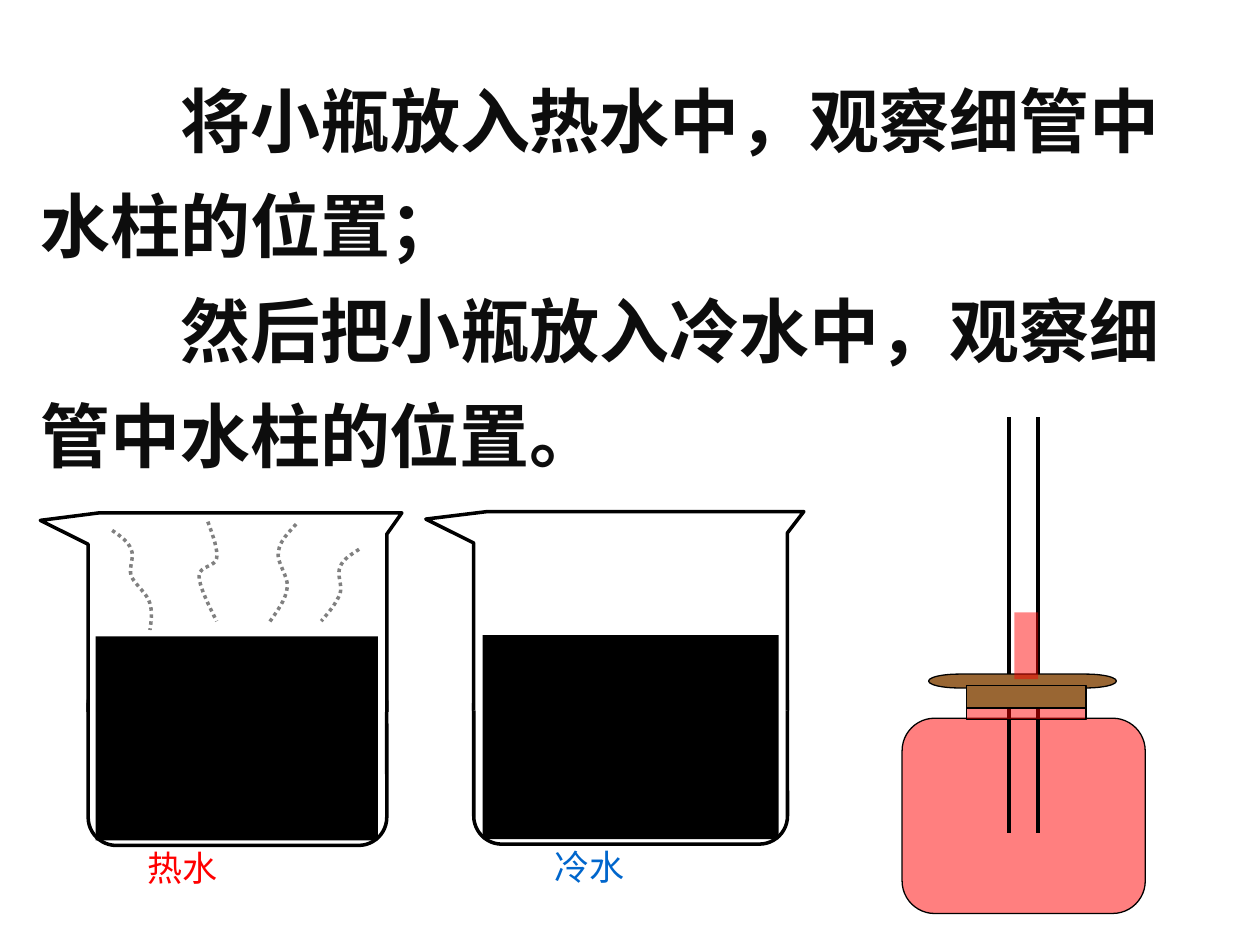
"""Build a slide on watching a thin tube's water column in hot and cold water."""
from dataclasses import dataclass

from lxml.etree import SubElement
from pptx import Presentation
from pptx.dml.color import RGBColor
from pptx.enum.dml import MSO_LINE
from pptx.enum.shapes import MSO_CONNECTOR, MSO_SHAPE as Preset
from pptx.enum.text import MSO_ANCHOR, MSO_AUTO_SIZE, PP_ALIGN
from pptx.oxml.ns import qn
from pptx.shapes.shapetree import GroupShapes
from pptx.util import Inches, Pt

FONT = "Noto Sans CJK SC"
BLACK, WHITE, RED, BLUE = "000000", "FFFFFF", "FF0000", "0066CC"
CORK, STEAM, INK = "996633", "808080", "0D0D0D"
Point = tuple[float, float]


@dataclass
class Beaker:
    left: float
    top: float
    width: float
    rim_start: float
    rim_overhang: float
    water_inset: float
    label: str
    label_left: float
    label_color: str
    steam: tuple[tuple[Point, ...], ...] = ()


@dataclass
class Part:
    preset: Preset
    box: tuple[float, float, float, float]
    fill: str
    opacity: int = 100
    outlined: bool = True


STEAM_CURVES = (
    ((1.65, 4.14), (1.69, 4.25), (1.73, 4.36), (1.72, 4.43), (1.71, 4.5),
     (1.58, 4.49), (1.58, 4.57), (1.58, 4.65), (1.65, 4.79), (1.72, 4.93)),
    ((2.35, 4.16), (2.29, 4.23), (2.22, 4.29), (2.21, 4.38), (2.19, 4.46),
     (2.29, 4.57), (2.28, 4.66), (2.27, 4.76), (2.2, 4.85), (2.13, 4.95)),
    ((0.89, 4.21), (0.95, 4.25), (1.02, 4.3), (1.04, 4.36), (1.07, 4.42),
     (1.02, 4.5), (1.04, 4.57), (1.07, 4.64), (1.17, 4.71), (1.19, 4.79),
     (1.21, 4.86), (1.2, 4.93), (1.19, 5)),
    ((2.85, 4.36), (2.79, 4.4), (2.72, 4.44), (2.7, 4.5), (2.67, 4.56),
     (2.72, 4.64), (2.7, 4.71), (2.67, 4.79), (2.61, 4.86), (2.55, 4.93)),
)
BEAKERS = (
    Beaker(0.7, 4.07, 2.37, 0.09, 0.12, 0.06, "热水", 1.07, RED, STEAM_CURVES),
    Beaker(3.76, 4.06, 2.49, 0.11, 0.13, 0.07, "冷水", 4.3, BLUE),
)
BOTTLE = Part(Preset.ROUNDED_RECTANGLE, (7.16, 5.7, 1.93, 1.55), RED, 50)
STOPPER_AND_COLUMN = (
    Part(Preset.FLOWCHART_TERMINATOR, (7.37, 5.35, 1.49, 0.11), CORK),
    Part(Preset.RECTANGLE, (7.67, 5.47, 0.95, 0.24), RED, 48),
    Part(Preset.RECTANGLE, (7.67, 5.44, 0.95, 0.18), CORK),
    Part(Preset.RECTANGLE, (8.05, 4.86, 0.19, 0.53), RED, 48, False),
)
TUBE_WALLS = (8.01, 8.24)
STEPS = (
    "将小瓶放入热水中，观察细管中水柱的位置；",
    "然后把小瓶放入冷水中，观察细管中水柱的位置。",
)


def rgb(value: str) -> RGBColor:
    """Turn a hex string into a colour."""
    return RGBColor.from_string(value)


def paint(shape, fill: str | None, line: str | None, weight: float = 2) -> None:
    """Give a shape its fill and outline, without a shadow."""
    shape.shadow.inherit = False
    if fill:
        shape.fill.solid()
        shape.fill.fore_color.rgb = rgb(fill)
    else:
        shape.fill.background()
    if line:
        shape.line.color.rgb = rgb(line)
        shape.line.width = Pt(weight)
    else:
        shape.line.fill.background()


def style(paragraph, size: int, color: str, bold: bool = False) -> None:
    """Format all runs of a paragraph for Latin and East Asian text."""
    for run in paragraph.runs:
        run.font.size, run.font.bold, run.font.name = Pt(size), bold, FONT
        run.font.color.rgb = rgb(color)
        SubElement(run.font._element, qn("a:ea"), typeface=FONT)


def draw_path(shapes: GroupShapes, points: tuple[Point, ...]):
    """Draw an open outline through points given in inches."""
    start, *rest = [(Inches(x), Inches(y)) for x, y in points]
    builder = shapes.build_freeform(*start)
    builder.add_line_segments(rest, close=False)
    return builder.convert_to_shape()


def draw_curve(shapes: GroupShapes, knots: tuple[Point, ...]):
    """Draw an open chain of cubic Bezier segments."""
    curve = draw_path(shapes, knots)
    outline = next(curve._element.iter(qn("a:path")))
    lines = outline.findall(qn("a:lnTo"))
    for first in range(0, len(lines), 3):
        segment = SubElement(outline, qn("a:cubicBezTo"))
        for line in lines[first:first + 3]:
            segment.append(line[0])
            outline.remove(line)
    return curve


def draw_box(shapes: GroupShapes, preset: Preset, *box: float):
    """Add a preset shape at a place given in inches."""
    return shapes.add_shape(preset, *map(Inches, box))


def draw_beaker(shapes: GroupShapes, beaker: Beaker) -> None:
    """Draw a beaker with its water, label and steam."""
    left, top, right = beaker.left, beaker.top, beaker.left + beaker.width
    base = draw_box(shapes, Preset.FLOWCHART_ALTERNATE_PROCESS,
                    left, top + 1.3, beaker.width, 1.34)
    paint(base, None, BLACK)
    wall = draw_path(shapes, (
        (left, top + 1.58), (left, top + 0.5), (left, top + 0.25),
        (left - 0.38, top + 0.06), (left + beaker.rim_start, top),
        (right + beaker.rim_overhang, top), (right, top + 0.17), (right, top + 1.58)))
    paint(wall, WHITE, BLACK)
    water = draw_box(shapes, Preset.RECTANGLE, left + beaker.water_inset, top + 0.98,
                     beaker.width - beaker.water_inset - 0.07, 1.62)
    paint(water, BLACK, None)
    for knots in beaker.steam:
        wisp = draw_curve(shapes, knots)
        paint(wisp, None, STEAM)
        wisp.line.dash_style = MSO_LINE.ROUND_DOT
    label = shapes.add_textbox(*map(Inches, (beaker.label_left, top + 2.6, 1.8, 0.75)))
    label.text_frame.word_wrap = True
    label.text_frame.text = beaker.label
    caption = label.text_frame.paragraphs[0]
    caption.alignment = PP_ALIGN.JUSTIFY
    style(caption, 20, beaker.label_color)


def draw_part(shapes: GroupShapes, part: Part) -> None:
    """Draw one part of the bottle, see-through where needed."""
    piece = draw_box(shapes, part.preset, *part.box)
    paint(piece, part.fill, BLACK if part.outlined else None, 0.75)
    if part.opacity < 100:
        color = piece._element.spPr.find(qn("a:solidFill"))[0]
        SubElement(color, qn("a:alpha"), val=str(part.opacity * 1000))


def draw_tube_wall(shapes: GroupShapes, x: float) -> None:
    """Draw one side of the thin tube."""
    wall = shapes.add_connector(MSO_CONNECTOR.STRAIGHT, *map(Inches, (x, 3.31, x, 6.61)))
    wall.line.color.rgb = rgb(BLACK)
    wall.line.width = Pt(2)
    SubElement(wall._element.spPr, qn("a:effectLst"))


def write_steps(body) -> None:
    """Write the instructions as paragraphs with a two-character indent."""
    body.left, body.top, body.width, body.height = map(Inches, (0.22, 0.4, 9.5, 3.43))
    frame = body.text_frame
    frame.text = "\n".join(STEPS)
    frame.word_wrap, frame.auto_size = True, MSO_AUTO_SIZE.NONE
    frame.vertical_anchor = MSO_ANCHOR.TOP
    for paragraph in frame.paragraphs:
        paragraph.line_spacing = 1.25
        paragraph.space_before = Pt(0)
        properties = paragraph._p.get_or_add_pPr()
        properties.set("marL", "0")
        properties.set("indent", str(Pt(80)))
        SubElement(properties, qn("a:buNone"))
        style(paragraph, 40, INK, True)


def main() -> None:
    """Build and save the slide."""
    deck = Presentation()
    deck.slide_width, deck.slide_height = Inches(10), Inches(7.5)
    slide = deck.slides.add_slide(deck.slide_layouts[1])
    title = slide.shapes.title._element
    title.getparent().remove(title)
    write_steps(slide.placeholders[1])
    for beaker in BEAKERS:
        draw_beaker(slide.shapes.add_group_shape().shapes, beaker)
    bottle = slide.shapes.add_group_shape().shapes
    draw_part(bottle, BOTTLE)
    for x in TUBE_WALLS:
        draw_tube_wall(bottle, x)
    for part in STOPPER_AND_COLUMN:
        draw_part(bottle, part)
    deck.save("out.pptx")


if __name__ == "__main__":
    main()
